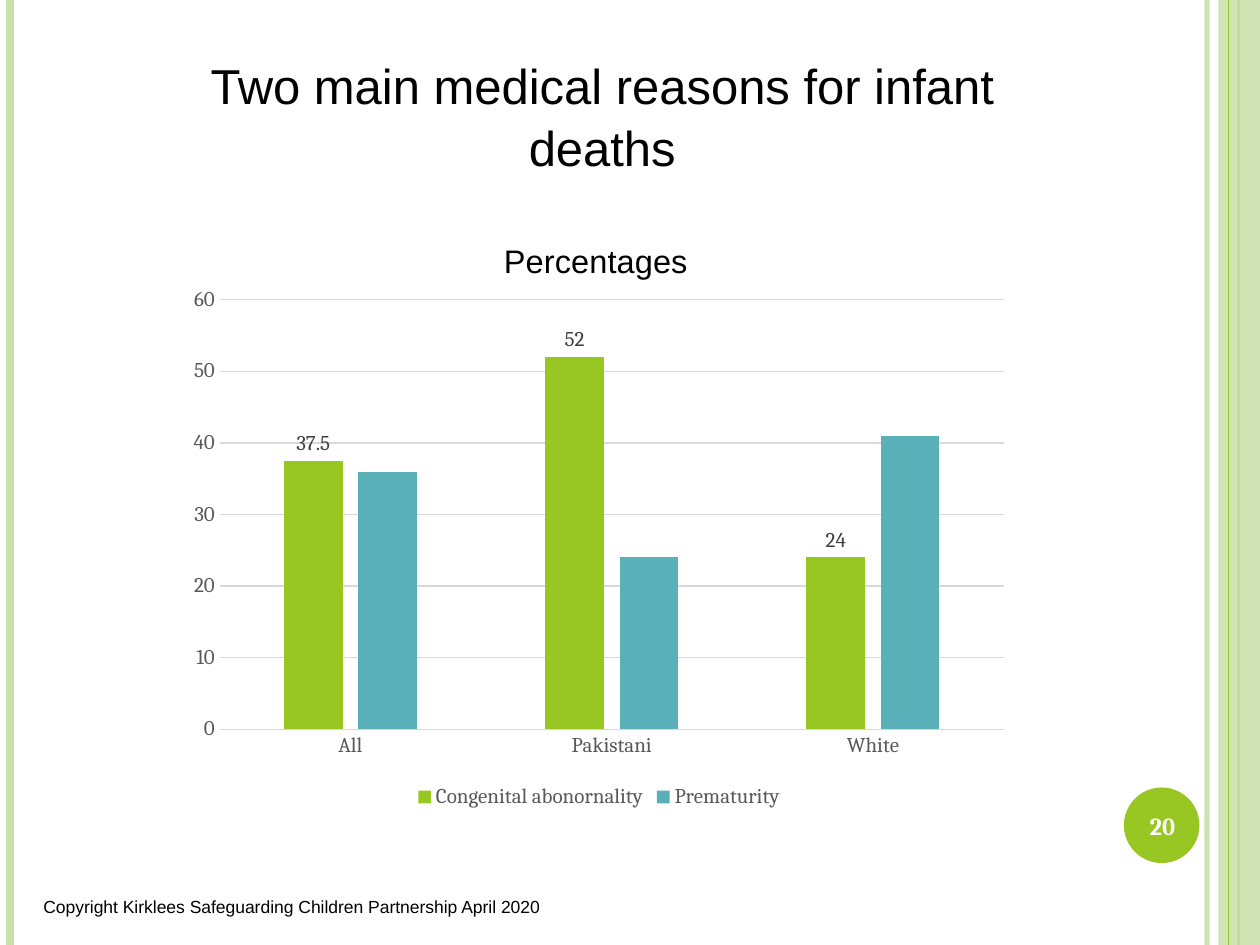
from lxml import etree
from pptx import Presentation
from pptx.chart.data import CategoryChartData
from pptx.dml.color import RGBColor
from pptx.enum.chart import XL_CHART_TYPE, XL_LABEL_POSITION, XL_LEGEND_POSITION, XL_TICK_MARK
from pptx.enum.shapes import MSO_CONNECTOR, MSO_SHAPE
from pptx.enum.text import MSO_ANCHOR, PP_ALIGN
from pptx.oxml import parse_xml
from pptx.oxml.ns import nsdecls, qn
from pptx.util import Inches, Pt

COLUMNS = XL_CHART_TYPE.COLUMN_CLUSTERED
OUTSIDE_END = XL_LABEL_POSITION.OUTSIDE_END
LEGEND_BOTTOM = XL_LEGEND_POSITION.BOTTOM
NO_TICK = XL_TICK_MARK.NONE
STRAIGHT = MSO_CONNECTOR.STRAIGHT
RECTANGLE, OVAL = MSO_SHAPE.RECTANGLE, MSO_SHAPE.OVAL
MIDDLE, TOP = MSO_ANCHOR.MIDDLE, MSO_ANCHOR.TOP
CENTER, RIGHT = PP_ALIGN.CENTER, PP_ALIGN.RIGHT

THEME = {
    "green": RGBColor.from_string("98C723"),
    "pale": RGBColor.from_string("CAE0AC"),
    "teal": RGBColor.from_string("59B0B9"),
    "black": RGBColor.from_string("000000"),
    "white": RGBColor.from_string("FFFFFF"),
    "axis": RGBColor.from_string("595959"),
    "label": RGBColor.from_string("404040"),
    "grid": RGBColor.from_string("D9D9D9"),
    "sans": "Arial",
    "serif": "Cambria",
    "title": 28,
    "chart_title": 18.6,
    "number": 14,
    "chart": 12,
    "footer": 10,
}


def style_font(font, size, face, color, bold=False):
    font.size = Pt(THEME[size])
    font.name = THEME[face]
    font.color.rgb = THEME[color]
    font.bold = bold


def add_text(slide, box, text, size, face, color, align, anchor=MIDDLE, wrap=True, bold=False):
    shape = slide.shapes.add_textbox(*[Inches(length) for length in box])
    frame = shape.text_frame
    frame.text = text
    frame.word_wrap = wrap
    frame.vertical_anchor = anchor
    paragraph = frame.paragraphs[0]
    paragraph.alignment = align
    style_font(paragraph.runs[0].font, size, face, color, bold)
    return paragraph


presentation = Presentation()
presentation.slide_width = Inches(10)
presentation.slide_height = Inches(7.5)
slide = presentation.slides.add_slide(presentation.slide_layouts[6])

stripes = {}
for name, x, color, width in [
    ("inner", 9.58, "pale", 3),
    ("left", 0.08, "pale", 4.5),
    ("edge", 9.83, "green", 1.5),
    ("band", 9.75, "green", 0.75),
]:
    stripe = slide.shapes.add_connector(STRAIGHT, Inches(x), 0, Inches(x), Inches(7.5))
    stripe.line.color.rgb = THEME[color]
    stripe.line.width = Pt(width)
    etree.SubElement(stripe._element.spPr, qn("a:effectLst"))
    stripes[name] = stripe

blocks = {}
for name, kind, box, color in [
    ("band", RECTANGLE, (9.67, 0, 0.33, 7.5), "pale"),
    ("badge", OVAL, (8.92, 6.25, 0.6, 0.6), "green"),
]:
    block = slide.shapes.add_shape(kind, *[Inches(length) for length in box])
    block.shadow.inherit = False
    block.fill.solid()
    block.fill.fore_color.rgb = THEME[color]
    block.line.fill.background()
    blocks[name] = block
stripes["band"]._element.addprevious(blocks["band"]._element)

for shape, opacity in [(stripes["inner"], 93000), (blocks["band"], 87000)]:
    color_element = next(shape._element.spPr.iter(qn("a:srgbClr")))
    etree.SubElement(color_element, qn("a:alpha")).set("val", str(opacity))

add_text(slide, (8.89, 6.27, 0.67, 0.57), "20", "number", "serif", "white", CENTER, bold=True)

chart_data = CategoryChartData()
chart_data.categories = ["All", "Pakistani", "White"]
chart_data.add_series("Congenital abonornality", (37.5, 52, 24))
chart_data.add_series("Prematurity", (36, 24, 41))
chart = slide.shapes.add_chart(
    COLUMNS, Inches(1.41), Inches(1.66), Inches(6.69), Inches(4.8), chart_data
).chart
style_font(chart.font, "chart", "serif", "axis")

chart.has_title = True
chart.chart_title.include_layout = False
chart.chart_title.text_frame.text = "Percentages"
style_font(chart.chart_title.text_frame.paragraphs[0].runs[0].font, "chart_title", "sans", "black")

chart.has_legend = True
chart.legend.position = LEGEND_BOTTOM
chart.legend.include_layout = False
style_font(chart.legend.font, "chart", "serif", "axis")

for axis in (chart.category_axis, chart.value_axis):
    axis.major_tick_mark = axis.minor_tick_mark = NO_TICK
    style_font(axis.tick_labels.font, "chart", "serif", "axis")
value_axis = chart.value_axis
value_axis.minimum_scale, value_axis.maximum_scale, value_axis.major_unit = 0, 60, 10
value_axis.format.line.fill.background()
for line in (chart.category_axis.format.line, value_axis.major_gridlines.format.line):
    line.color.rgb = THEME["grid"]
    line.width = Pt(0.75)

plot = chart.plots[0]
plot.gap_width = 219
plot.overlap = -27
plot.vary_by_categories = False
for series, color in zip(plot.series, ("green", "teal")):
    series.format.fill.solid()
    series.format.fill.fore_color.rgb = THEME[color]
labels = plot.series[0].data_labels
labels.show_value = True
labels.position = OUTSIDE_END
style_font(labels.font, "chart", "serif", "label")

chart_element = chart._chartSpace.chart
for parent, settings in [
    (chart_element.find(qn("c:title")), {"xMode": "edge", "yMode": "edge", "x": 0.38, "y": 0.04}),
    (chart_element.plotArea, {"layoutTarget": "inner", "xMode": "edge", "yMode": "edge",
                              "x": 0.05, "y": 0.15, "w": 0.93, "h": 0.71}),
]:
    for old_layout in parent.findall(qn("c:layout")):
        parent.remove(old_layout)
    layout = parse_xml(f"<c:layout {nsdecls('c')}><c:manualLayout/></c:layout>")
    for key, value in settings.items():
        etree.SubElement(layout[0], qn(f"c:{key}")).set("val", str(value))
    text_element = parent.find(qn("c:tx"))
    parent.insert(0 if text_element is None else 1, layout)

add_text(slide, (0.2, 7.06, 4.18, 0.27),
         "Copyright Kirklees Safeguarding Children Partnership April 2020",
         "footer", "sans", "black", RIGHT, anchor=TOP, wrap=False)
title = add_text(slide, (1.46, 0.39, 6.64, 1.04), "Two main medical reasons for infant deaths",
                 "title", "sans", "black", CENTER)
title.line_spacing = 1.05

presentation.save("out.pptx")
